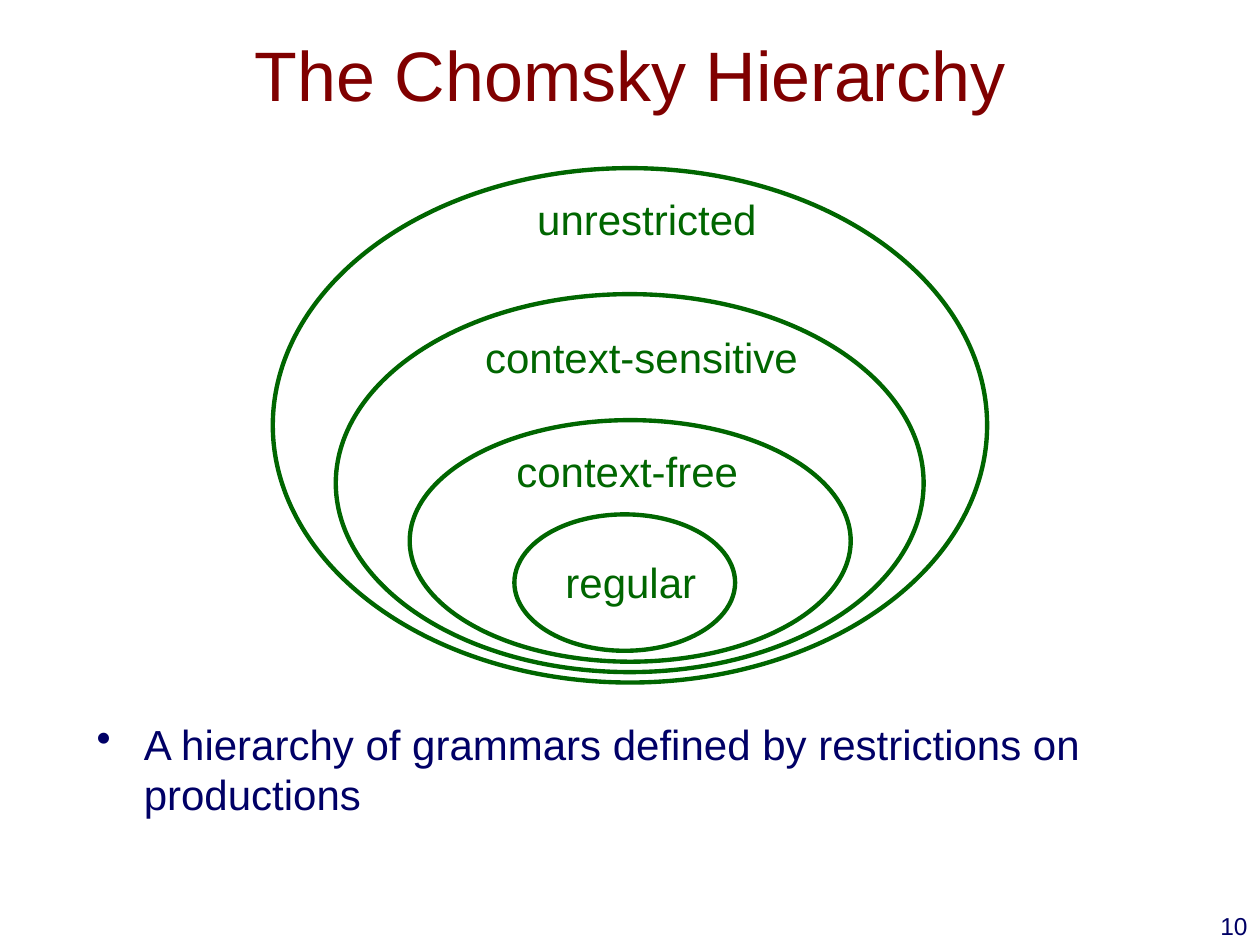
from dataclasses import dataclass

import pptx
import pptx.dml.color
import pptx.enum.shapes
import pptx.enum.text
import pptx.oxml.ns
import pptx.util
from lxml import etree

Cm = pptx.util.Cm
Pt = pptx.util.Pt
RGBColor = pptx.dml.color.RGBColor
ALIGN = pptx.enum.text.PP_ALIGN
ANCHOR = pptx.enum.text.MSO_ANCHOR

GREEN = RGBColor(0x00, 0x66, 0x00)
NAVY = RGBColor(0x00, 0x00, 0x66)
MAROON = RGBColor(0x80, 0x00, 0x00)


@dataclass
class Area:
    left: float
    top: float
    width: float
    height: float

    def lengths(self) -> tuple:
        return Cm(self.left), Cm(self.top), Cm(self.width), Cm(self.height)


@dataclass
class GrammarClass:
    name: str
    ellipse: Area
    label: Area


# Outermost class first
GRAMMAR_CLASSES = [
    GrammarClass("unrestricted", Area(5.5, 3.39, 14.4, 10.37), Area(10.58, 3.78, 4.93, 1.27)),
    GrammarClass("context-sensitive", Area(6.77, 5.93, 11.85, 7.62), Area(9.53, 6.55, 6.81, 1.27)),
    GrammarClass("context-free", Area(8.26, 8.47, 8.89, 4.87), Area(10.16, 8.86, 4.98, 1.27)),
    GrammarClass("regular", Area(10.37, 10.37, 4.45, 2.75), Area(11.15, 11.1, 3.15, 1.27)),
]


def write(shape, text: str, size: int, color: RGBColor, align=ALIGN.LEFT, wrap: bool = True):
    """Fill a shape with one formatted paragraph and return the paragraph."""
    shape.text_frame.word_wrap = wrap
    para = shape.text_frame.paragraphs[0]
    para.text = text
    para.alignment = align
    para.font.name = "Arial"
    para.font.size = Pt(size)
    para.font.color.rgb = color
    return para


def draw_ellipse(page, area: Area) -> None:
    ellipse = page.shapes.add_shape(pptx.enum.shapes.MSO_SHAPE.OVAL, *area.lengths())
    ellipse.shadow.inherit = False
    ellipse.fill.background()
    ellipse.line.color.rgb = GREEN
    ellipse.line.width = Pt(2.5)


def add_bullet(para, indent: float) -> None:
    properties = para._p.get_or_add_pPr()
    properties.set("marL", str(Cm(indent)))
    properties.set("indent", str(-Cm(indent)))
    bullet = etree.SubElement(properties, pptx.oxml.ns.qn("a:buChar"))
    bullet.set("char", "•")
    # The bullet belongs before the default run properties
    properties.insert_element_before(bullet, "a:defRPr")


def main() -> None:
    deck = pptx.Presentation()
    deck.slide_width, deck.slide_height = Cm(25.4), Cm(19.05)
    page = deck.slides.add_slide(deck.slide_layouts[5])

    # Title
    title = page.shapes.title
    title.left, title.top, title.width, title.height = Area(1.9, -0.1, 21.6, 3.17).lengths()
    title.text_frame.vertical_anchor = ANCHOR.MIDDLE
    write(title, "The Chomsky Hierarchy", 40, MAROON, ALIGN.CENTER)

    # Nested grammar classes
    for grammar in GRAMMAR_CLASSES:
        draw_ellipse(page, grammar.ellipse)
    for grammar in GRAMMAR_CLASSES:
        label = page.shapes.add_textbox(*grammar.label.lengths())
        write(label, grammar.name, 24, GREEN, wrap=False)

    # Explanation
    body = page.shapes.add_textbox(*Area(1.7, 14.35, 21.6, 4.01).lengths())
    para = write(body, "A hierarchy of grammars defined by restrictions on productions", 24, NAVY)
    para.space_before = Pt(4.8)
    add_bullet(para, 0.95)

    # Page number
    number = page.shapes.add_textbox(*Area(20.12, 18.24, 5.28, 1.27).lengths())
    write(number, "10", 14, NAVY, ALIGN.RIGHT)

    deck.save("out.pptx")


if __name__ == "__main__":
    main()
